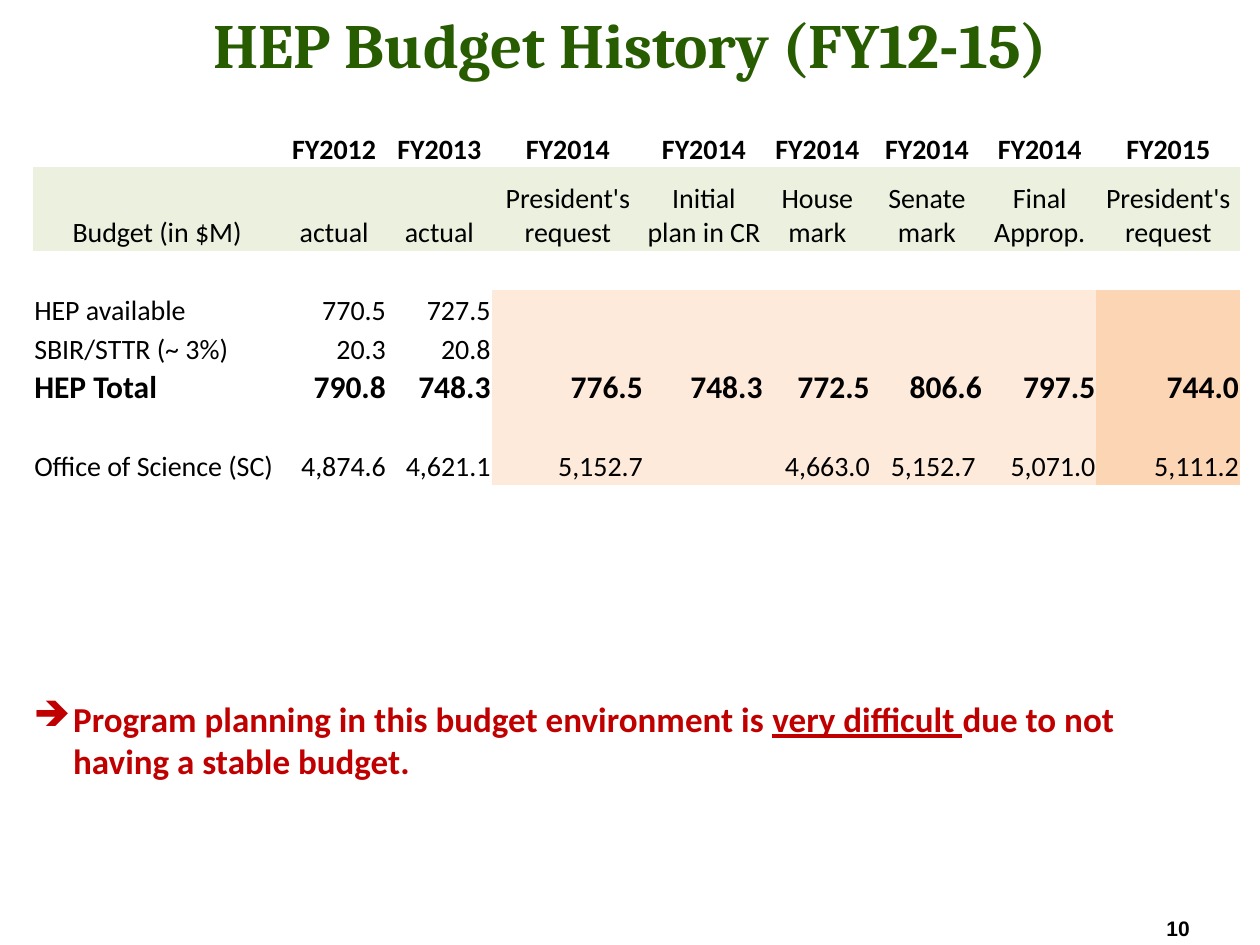
"""Build the HEP budget history slide."""
from dataclasses import dataclass

from lxml import etree
from pptx import Presentation
from pptx.dml.color import RGBColor
from pptx.enum import text as t
from pptx.oxml import ns
from pptx.util import Pt


@dataclass(frozen=True)
class Theme:
    title_font: str = "Cambria"
    body_font: str = "Calibri"
    number_font: str = "Arial"
    green: str = "285C00"
    black: str = "000000"
    red: str = "C00000"
    header_fill: str = "EBF1DE"
    plan_fill: str = "FDEADA"
    request_fill: str = "FCD5B4"
    title_size: int = 36
    note_size: int = 20
    total_size: int = 18
    table_size: int = 16
    number_size: int = 12


THEME = Theme()
NO_GRID_STYLE = "{2D5ABB26-0587-4C30-8999-92F81FD0307C}"
COLUMN_WIDTHS = [141.8, 60.5, 59.8, 87.1, 68.4, 61.2, 64.1, 64.8, 82.1]
ROW_HEIGHT = 22.3
HEADER_HEIGHT = 47.5
HEADER_ROW, TOTAL_ROW, FIRST_VALUE_ROW = 1, 5, 3
FIRST_PLAN_COLUMN = 3
BUDGET = [
    ["", "FY2012", "FY2013", "FY2014", "FY2014", "FY2014", "FY2014", "FY2014", "FY2015"],
    ["Budget (in $M)", "actual", "actual", "President's request", "Initial plan in CR",
     "House mark", "Senate mark", "Final Approp.", "President's request"],
    [""] * 9,
    ["HEP available", "770.5", "727.5"] + [""] * 6,
    ["SBIR/STTR (~ 3%)", "20.3", "20.8"] + [""] * 6,
    ["HEP Total", "790.8", "748.3", "776.5", "748.3", "772.5", "806.6", "797.5", "744.0"],
    [""] * 9,
    ["Office of Science (SC)", "4,874.6", "4,621.1", "5,152.7", "", "4,663.0",
     "5,152.7 ", "5,071.0", "5,111.2"],
]


def format_run(run, font, size, color, bold=False):
    """Apply font, size, colour and weight to a run."""
    run.font.name = font
    run.font.size = Pt(size)
    run.font.bold = bold
    run.font.color.rgb = RGBColor.from_string(color)


def add_title(slide, wording):
    """Place the slide title in its placeholder."""
    title = slide.shapes.title
    title.left, title.top, title.width, title.height = Pt(36), Pt(-1.4), Pt(648), Pt(52.6)
    frame = title.text_frame
    frame.text = wording
    frame.vertical_anchor = t.MSO_ANCHOR.MIDDLE
    heading = frame.paragraphs[0]
    heading.alignment = t.PP_ALIGN.CENTER
    format_run(heading.runs[0], THEME.title_font, THEME.title_size, THEME.green, True)


def cell_fill(row, column):
    """Return the fill colour of a budget cell, or None."""
    if row == HEADER_ROW:
        return THEME.header_fill
    if row >= FIRST_VALUE_ROW and column >= FIRST_PLAN_COLUMN:
        last = column == len(COLUMN_WIDTHS) - 1
        return THEME.request_fill if last else THEME.plan_fill
    return None


def cell_alignment(row, column):
    """Return the text alignment of a budget cell."""
    if row <= HEADER_ROW:
        return t.PP_ALIGN.CENTER
    return t.PP_ALIGN.RIGHT if column else t.PP_ALIGN.LEFT


def fill_cell(cell, row, column):
    """Write and format one budget cell."""
    cell.margin_left = cell.margin_right = cell.margin_top = Pt(0.7)
    cell.margin_bottom = Pt(0)
    cell.vertical_anchor = t.MSO_ANCHOR.BOTTOM
    color = cell_fill(row, column)
    if color:
        cell.fill.solid()
        cell.fill.fore_color.rgb = RGBColor.from_string(color)
    else:
        cell.fill.background()
    entry = cell.text_frame.paragraphs[0]
    entry.text = BUDGET[row][column]
    entry.alignment = cell_alignment(row, column)
    size = THEME.total_size if row == TOTAL_ROW else THEME.table_size
    for run in entry.runs:
        format_run(run, THEME.body_font, size, THEME.black, row in (0, TOTAL_ROW))
    if not entry.runs:
        end = etree.SubElement(entry._p, ns.qn("a:endParaRPr"))
        end.set("sz", str(THEME.table_size * 100))


def add_budget_table(slide):
    """Add the budget table without grid or banding."""
    heights = [ROW_HEIGHT] * len(BUDGET)
    heights[HEADER_ROW] = HEADER_HEIGHT
    table = slide.shapes.add_table(
        len(BUDGET), len(COLUMN_WIDTHS), Pt(18.9), Pt(73.4),
        Pt(sum(COLUMN_WIDTHS)), Pt(sum(heights))).table
    table.first_row = table.horz_banding = False
    table._tbl.tblPr.find(ns.qn("a:tableStyleId")).text = NO_GRID_STYLE
    for column, width in zip(table.columns, COLUMN_WIDTHS):
        column.width = Pt(width)
    for row, height in enumerate(heights):
        table.rows[row].height = Pt(height)
        for column in range(len(COLUMN_WIDTHS)):
            fill_cell(table.cell(row, column), row, column)


def add_note(slide, parts, underlined):
    """Add the arrow-bulleted conclusion, underlining one part."""
    frame = slide.shapes.add_textbox(Pt(12.2), Pt(395), Pt(683.3), Pt(79)).text_frame
    frame.word_wrap = True
    note = frame.paragraphs[0]
    properties = note._p.get_or_add_pPr()
    properties.set("marL", str(Pt(22.5)))
    properties.set("indent", str(Pt(-22.5)))
    etree.SubElement(properties, ns.qn("a:buChar")).set("char", "➔")
    for part in parts:
        run = note.add_run()
        run.text = part
        format_run(run, THEME.body_font, THEME.note_size, THEME.red, True)
        run.font.underline = part == underlined


def add_page_number(slide, number):
    """Add the page number at the lower right."""
    frame = slide.shapes.add_textbox(Pt(657.4), Pt(521.3), Pt(29.5), Pt(18.7)).text_frame
    frame.word_wrap = True
    frame.text = number
    frame.vertical_anchor = t.MSO_ANCHOR.MIDDLE
    label = frame.paragraphs[0]
    label.alignment = t.PP_ALIGN.RIGHT
    format_run(label.runs[0], THEME.number_font, THEME.number_size, THEME.black, True)


def main():
    """Assemble and save the slide."""
    deck = Presentation()
    deck.slide_width, deck.slide_height = Pt(720), Pt(540)
    slide = deck.slides.add_slide(deck.slide_layouts[5])
    add_title(slide, "HEP Budget History (FY12-15)")
    add_page_number(slide, "10")
    add_budget_table(slide)
    add_note(slide, ["Program planning in this budget environment is ", "very difficult ",
                     "due to not having a stable budget."], "very difficult ")
    deck.save("out.pptx")


if __name__ == "__main__":
    main()
